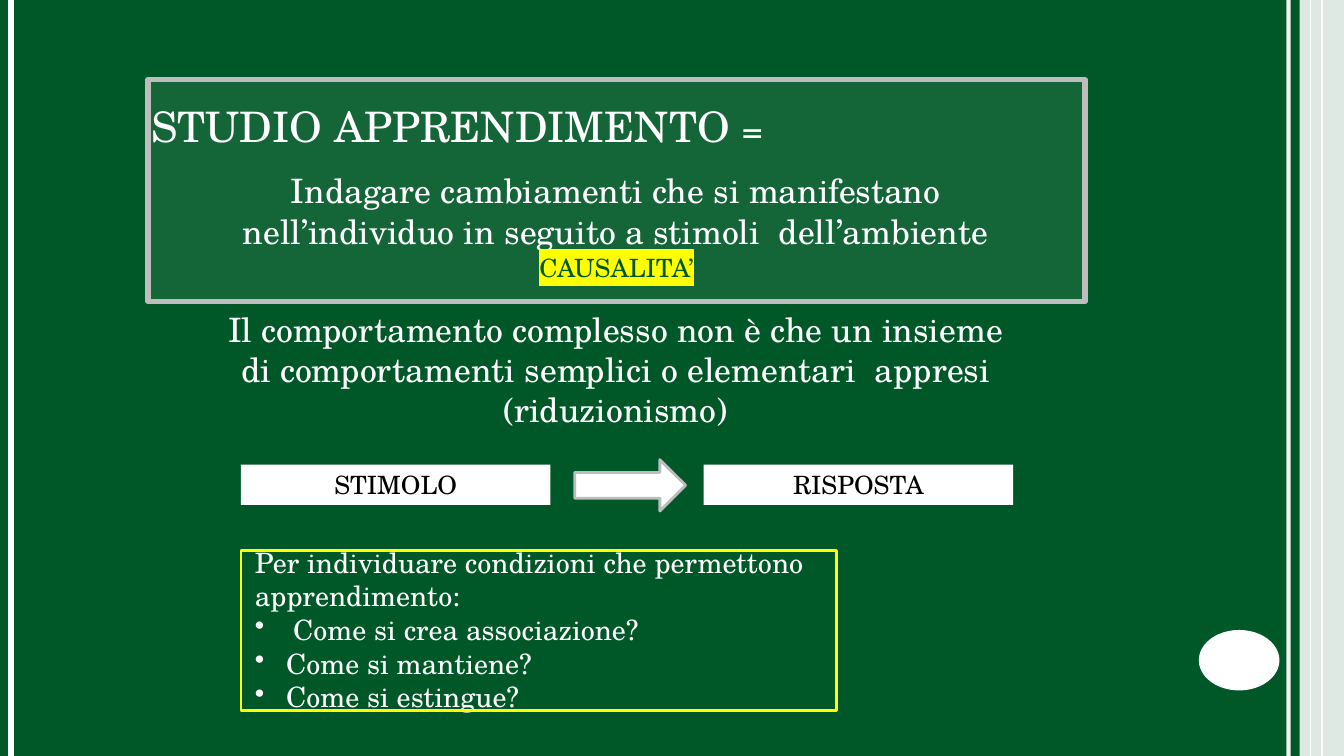
from lxml import etree
from pptx import Presentation
from pptx.dml.color import RGBColor
from pptx.enum import shapes, text
from pptx.oxml import ns
from pptx.util import Inches, Pt

GREEN = RGBColor(0x00, 0x58, 0x28)
WHITE = RGBColor(0xFF, 0xFF, 0xFF)
GREY = RGBColor(0xBD, 0xBD, 0xBD)
YELLOW = RGBColor(0xFF, 0xFF, 0x00)
BLACK = RGBColor(0x00, 0x00, 0x00)
FONT = "TeX Gyre Schola"


def set_alpha(properties, percent):
    """Make the first solid colour under the element translucent."""
    colour = properties.find(".//" + ns.qn("a:srgbClr"))
    etree.SubElement(colour, ns.qn("a:alpha"), val=str(percent * 1000))


def style(paragraph, size, colour=WHITE, align=text.PP_ALIGN.CENTER):
    """Give a paragraph its font, size, colour and alignment."""
    paragraph.alignment = align
    paragraph.font.name = FONT
    paragraph.font.size = Pt(size)
    paragraph.font.color.rgb = colour


def set_bullet(paragraph, indent, char=None):
    """Hang the paragraph by an indent, with a bullet or without one."""
    properties = paragraph._p.get_or_add_pPr()
    properties.set("marL", str(Inches(indent)))
    properties.set("indent", str(-Inches(indent)))
    bullet = etree.Element(ns.qn("a:buChar" if char else "a:buNone"))
    if char:
        bullet.set("char", char)
    properties.insert_element_before(bullet, "a:tabLst", "a:defRPr", "a:extLst")


def add_block(slide, kind, box, fill=None, line=None, width=0):
    """Add a flat preset shape to the box."""
    block = slide.shapes.add_shape(kind, *map(Inches, box))
    block.shadow.inherit = False
    if fill is None:
        block.fill.background()
    else:
        block.fill.solid()
        block.fill.fore_color.rgb = fill
    if line is None:
        block.line.fill.background()
    else:
        block.line.color.rgb = line
        block.line.width = Pt(width)
    return block


def add_stripe(slide, x, top, height, width):
    """Add one white vertical line."""
    stripe = slide.shapes.add_connector(
        shapes.MSO_CONNECTOR.STRAIGHT,
        Inches(x), Inches(top), Inches(x), Inches(top + height))
    stripe.line.color.rgb = WHITE
    stripe.line.width = Pt(width)
    etree.SubElement(stripe._element.spPr, ns.qn("a:effectLst"))
    return stripe


def add_frame(slide, box):
    """Draw the edge stripes, the side band and the page disc."""
    left, top, width, height = box
    right = left + width
    set_alpha(add_stripe(slide, right - 0.55, top, height, 3)._element.spPr, 93)
    add_stripe(slide, left + 0.11, top, height, 4.5)
    add_stripe(slide, right - 0.22, top, height, 1.5)
    band = add_block(slide, shapes.MSO_SHAPE.RECTANGLE,
                     (right - 0.44, top, 0.44, height), WHITE)
    set_alpha(band._element.spPr, 87)
    add_stripe(slide, right - 0.33, top, height, 0.75)
    add_block(slide, shapes.MSO_SHAPE.OVAL,
              (right - 1.44, top + 6.25, 0.8, 0.6), WHITE)


def place(placeholder, box):
    """Move a placeholder to the box and return its text frame."""
    placeholder.left, placeholder.top, placeholder.width, placeholder.height = map(Inches, box)
    frame = placeholder.text_frame
    frame.auto_size = text.MSO_AUTO_SIZE.NONE
    frame.word_wrap = True
    return frame


def add_heading(slide, box):
    """Write the title at the foot of the box."""
    frame = place(slide.shapes.title, box)
    frame.vertical_anchor = text.MSO_ANCHOR.BOTTOM
    frame.margin_left = 0
    heading = frame.paragraphs[0]
    style(heading, 30, align=text.PP_ALIGN.LEFT)
    heading.add_run().text = "STUDIO APPRENDIMENTO "
    equals = heading.add_run()
    equals.text = "="
    equals.font.size = Pt(24)


def add_definition(slide, box):
    """Write the two centred statements."""
    frame = place(slide.placeholders[1], box)
    frame.text = (
        "Indagare cambiamenti che si manifestano nell’individuo in seguito a stimoli  dell’ambiente\n"
        "Il comportamento complesso non è che un insieme di comportamenti semplici o elementari  "
        "appresi (riduzionismo)")
    for statement, gap in zip(frame.paragraphs, (0, 41)):
        style(statement, 24)
        statement.space_before = Pt(gap)
        set_bullet(statement, 0)


def add_causality(slide, box):
    """Draw the translucent panel with its highlighted word."""
    panel = add_block(slide, shapes.MSO_SHAPE.RECTANGLE, box, WHITE, GREY, 4)
    set_alpha(panel._element.spPr, 8)
    frame = panel.text_frame
    frame.vertical_anchor = text.MSO_ANCHOR.BOTTOM
    frame.margin_bottom = Inches(0.19)
    style(frame.paragraphs[0], 18, GREEN)
    causality = frame.paragraphs[0].add_run()
    causality.text = "CAUSALITA’"
    causality.font.color.rgb = GREEN
    highlight = etree.SubElement(causality.font._element, ns.qn("a:highlight"))
    etree.SubElement(highlight, ns.qn("a:srgbClr"), val=str(YELLOW))


def add_stimulus_response(slide, box):
    """Draw stimulus, arrow and response in a row."""
    left, top, width, height = box
    label_width = 3.07
    for label, x in (("STIMOLO", left), ("RISPOSTA", left + width - label_width)):
        block = add_block(slide, shapes.MSO_SHAPE.RECTANGLE,
                          (x, top, label_width, height), WHITE)
        block.text_frame.text = label
        style(block.text_frame.paragraphs[0], 18, BLACK)
    add_block(slide, shapes.MSO_SHAPE.RIGHT_ARROW,
              (left + 3.31, top - 0.05, 1.1, 0.51), WHITE, GREY, 2)


def add_questions(slide, box):
    """Write the questions and outline them in yellow."""
    left, top, width, height = box
    frame = slide.shapes.add_textbox(
        *map(Inches, (left + 0.04, top - 0.1, 7.6, height + 0.19))).text_frame
    frame.word_wrap = True
    frame.text = ("Per individuare condizioni che permettono apprendimento:\n"
                  "Come si crea associazione?\nCome si mantiene?\nCome si estingue?")
    frame.margin_right = Inches(7.6 - width)
    for question, indent in zip(frame.paragraphs, (0, 0.38, 0.31, 0.31)):
        style(question, 20, align=text.PP_ALIGN.LEFT)
        set_bullet(question, indent, "•" if indent else None)
    add_block(slide, shapes.MSO_SHAPE.RECTANGLE, box, line=YELLOW, width=2)


def main():
    """Build the slide and save it."""
    deck = Presentation()
    deck.slide_width, deck.slide_height = Inches(13.33), Inches(7.5)
    slide = deck.slides.add_slide(deck.slide_layouts[1])
    slide.background.fill.solid()
    slide.background.fill.fore_color.rgb = GREEN
    add_frame(slide, (0, 0, 13.33, 7.5))
    add_heading(slide, (1.5, 0.3, 10.06, 1.25))
    add_definition(slide, (2.02, 1.64, 8.17, 5.33))
    add_causality(slide, (1.47, 0.79, 9.29, 2.2))
    add_stimulus_response(slide, (2.39, 4.61, 7.66, 0.4))
    add_questions(slide, (2.39, 5.46, 5.91, 1.59))
    deck.save("out.pptx")


if __name__ == "__main__":
    main()
